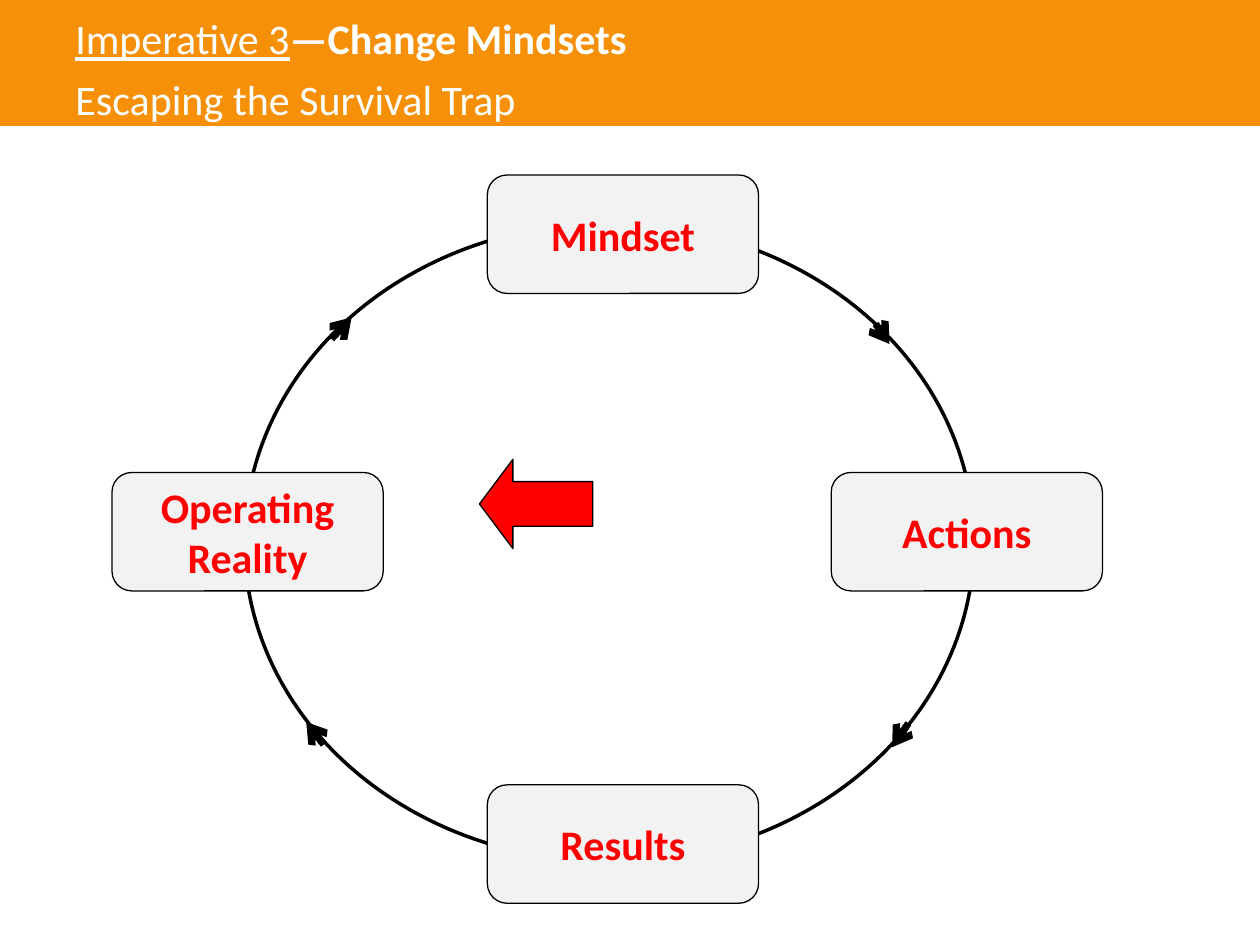
from dataclasses import dataclass

from lxml.etree import SubElement
from pptx import Presentation
from pptx.dml.color import RGBColor
from pptx.enum.dml import MSO_LINE
from pptx.enum.shapes import MSO_CONNECTOR, MSO_SHAPE
from pptx.enum.text import MSO_ANCHOR, PP_ALIGN
from pptx.oxml.ns import qn
from pptx.util import Pt


@dataclass(frozen=True)
class Theme:
    band: RGBColor = RGBColor(0xF6, 0x90, 0x08)
    white: RGBColor = RGBColor(0xFF, 0xFF, 0xFF)
    black: RGBColor = RGBColor(0, 0, 0)
    box: RGBColor = RGBColor(0xF2, 0xF2, 0xF2)
    accent: RGBColor = RGBColor(0xFF, 0, 0)
    font: str = "Calibri"
    size: int = 24


THEME = Theme()
BOX_W, BOX_H = 155, 67.7
STAGES = [
    ("Mindset", 278.5, 100),
    ("Operating Reality", 64, 270),
    ("Actions", 475, 270),
    ("Results", 278.5, 448.5),
]
FLOW_MARKS = [
    (501.8, 187.2, 508.3, 196.6),
    (185, 425.5, 175, 412.6),
    (519.1, 413.3, 509.8, 427),
    (189.4, 193.7, 200.9, 181.4),
]


def add_shape(slide, kind, box, fill, line_width=None):
    sp = slide.shapes.add_shape(kind, *map(Pt, box))
    sp.shadow.inherit = False
    sp.fill.solid()
    sp.fill.fore_color.rgb = fill
    if line_width is None:
        sp.line.fill.background()
    else:
        sp.line.color.rgb = THEME.black
        sp.line.width = Pt(line_width)
    return sp


def style_font(p, color):
    p.font.name = THEME.font
    p.font.size = Pt(THEME.size)
    p.font.color.rgb = color


def add_stage(slide, label, left, top):
    sp = add_shape(slide, MSO_SHAPE.ROUNDED_RECTANGLE,
                   (left, top, BOX_W, BOX_H), THEME.box, 0.75)
    tf = sp.text_frame
    tf.word_wrap = True
    tf.vertical_anchor = MSO_ANCHOR.MIDDLE
    p = tf.paragraphs[0]
    p.text = label
    p.alignment = PP_ALIGN.CENTER
    style_font(p, THEME.accent)
    p.font.bold = True


def add_flow_mark(slide, ends):
    cx = slide.shapes.add_connector(MSO_CONNECTOR.STRAIGHT, *map(Pt, ends))
    cx.line.color.rgb = THEME.black
    cx.line.width = Pt(4)
    cx.line.dash_style = MSO_LINE.SQUARE_DOT
    SubElement(cx.line._get_or_add_ln(), qn("a:tailEnd"), type="arrow")
    SubElement(cx._element.spPr, qn("a:effectLst"))


def add_title(slide):
    tf = slide.shapes.add_textbox(Pt(36), Pt(0), Pt(551.5), Pt(72)).text_frame
    tf.word_wrap = True
    tf.vertical_anchor = MSO_ANCHOR.MIDDLE
    heading, subtitle = tf.paragraphs[0], tf.add_paragraph()
    r = heading.add_run()
    r.text = "Imperative 3"
    r.font.underline = True
    r = heading.add_run()
    r.text = "—Change Mindsets"
    r.font.bold = True
    subtitle.text = "Escaping the Survival Trap"
    for p in (heading, subtitle):
        p.line_spacing = Pt(35)
        style_font(p, THEME.white)


def main():
    prs = Presentation()
    prs.slide_width, prs.slide_height = Pt(720), Pt(540)
    slide = prs.slides.add_slide(prs.slide_layouts[6])
    add_shape(slide, MSO_SHAPE.RECTANGLE, (0, 0, 720, 72), THEME.band)
    add_shape(slide, MSO_SHAPE.OVAL, (139.7, 127.4, 416.9, 365), THEME.white, 2)
    for stage in STAGES:
        add_stage(slide, *stage)
    for ends in FLOW_MARKS:
        add_flow_mark(slide, ends)
    arrow = add_shape(slide, MSO_SHAPE.LEFT_ARROW, (274, 262.5, 64.8, 51),
                      THEME.accent, 0.75)
    arrow.adjustments[0] = 0.5
    arrow.adjustments[1] = 0.375
    add_title(slide)
    prs.save("out.pptx")


if __name__ == "__main__":
    main()
